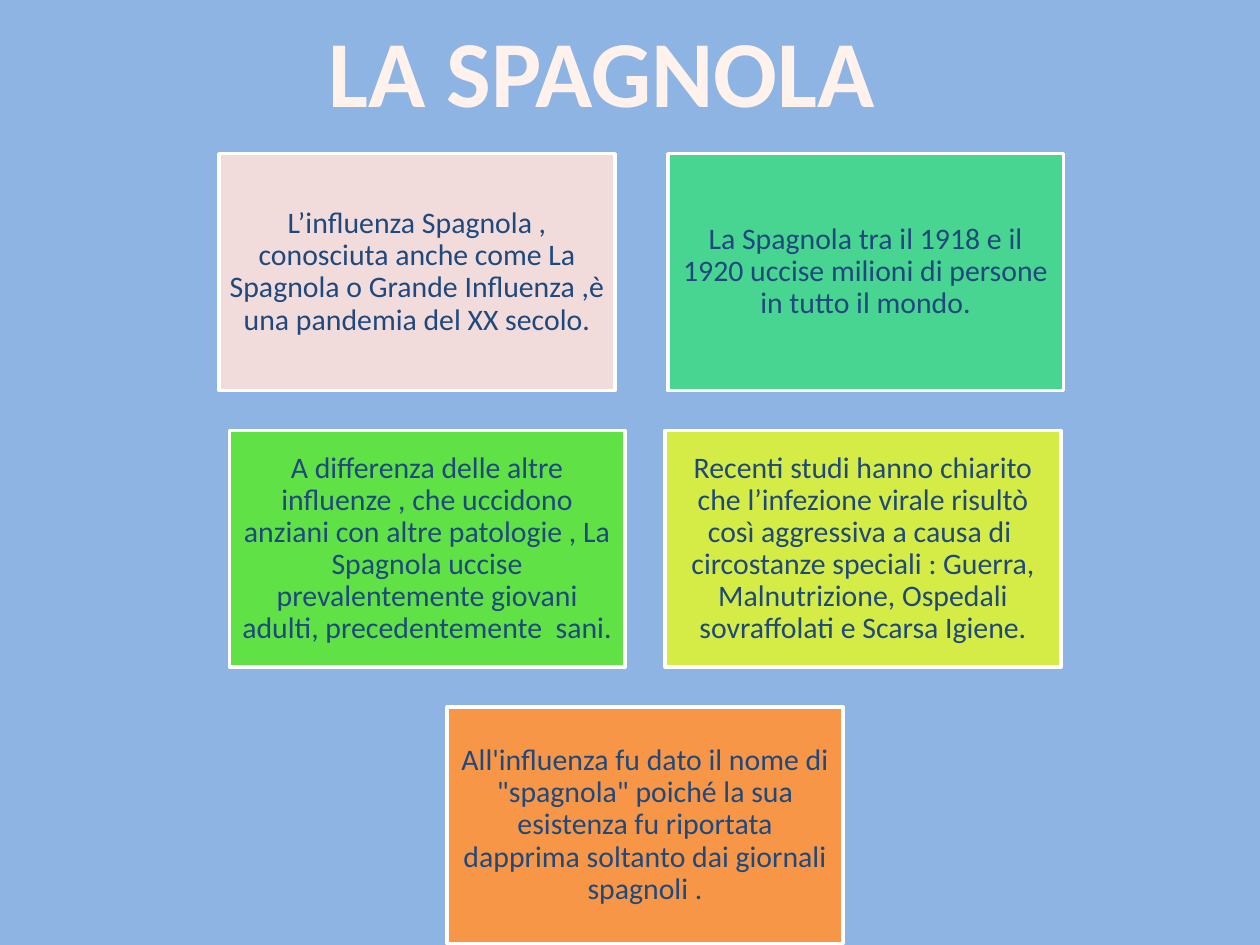
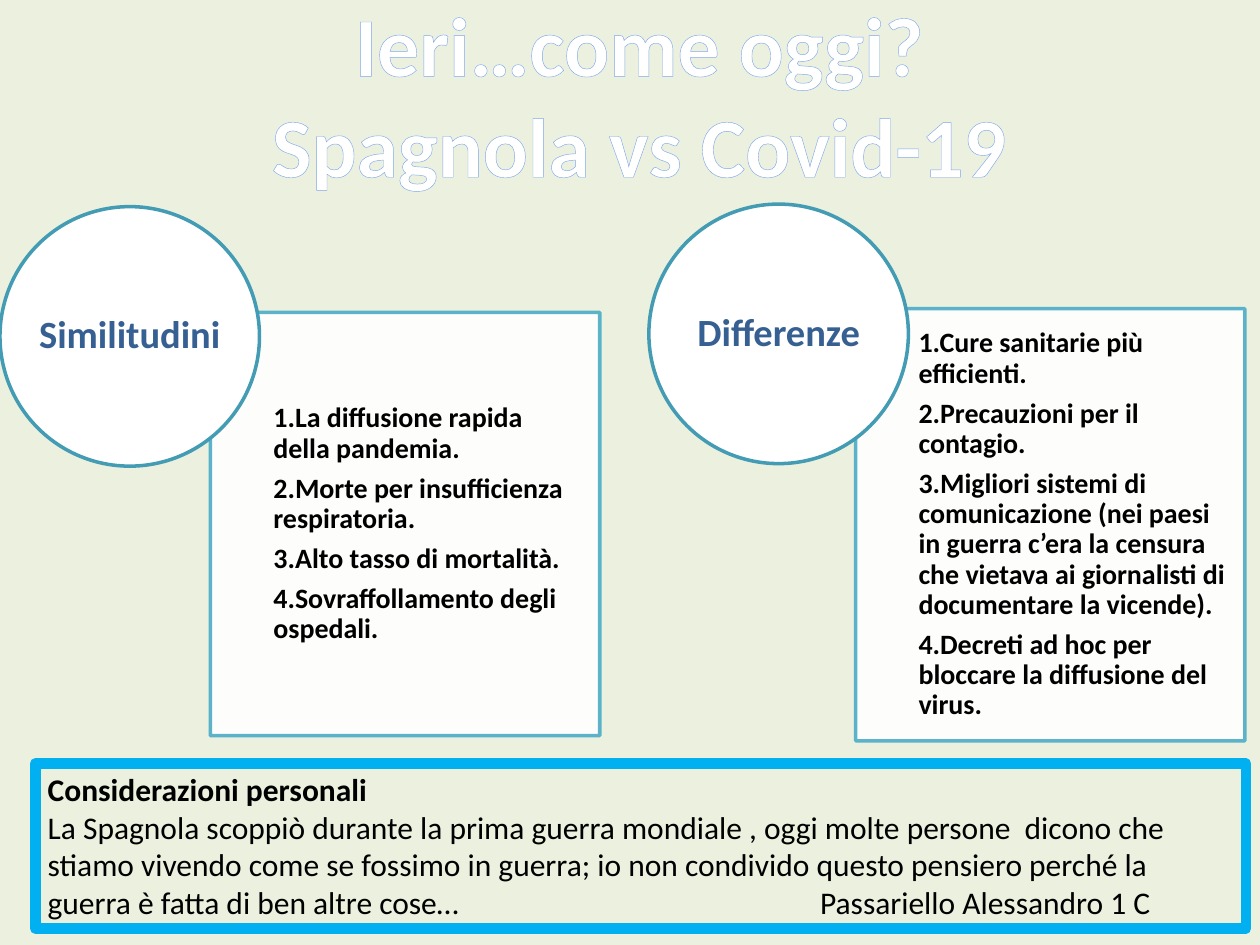
import lxml.etree
import pptx
import pptx.dml.color
import pptx.enum.shapes
import pptx.enum.text
import pptx.oxml.ns
import pptx.util

Inches = pptx.util.Inches
Pt = pptx.util.Pt
MSO_SHAPE = pptx.enum.shapes.MSO_SHAPE
ALIGN = pptx.enum.text.PP_ALIGN
ANCHOR = pptx.enum.text.MSO_ANCHOR
FONT = "Calibri"

SPAGNOLA_TITLE = {
    "lines": ["LA SPAGNOLA"], "place": (2.48, 0.05, 4.59, 1.01),
    "size": 54, "color": "FFF2ED", "outline": "EB6A00", "wrap": False,
}
COMPARISON_TITLE = {
    "lines": ["Ieri…come oggi?", "Spagnola vs Covid-19"], "place": (0.51, -0.11, 9.13, 1.72),
    "size": 48, "color": "FFFFFF", "outline": "7EA6EA", "wrap": True,
}

# Each row of cards: the left edge of every card with its fill and text
CARD_ROWS = [
    [
        (1.74, "F2DCDB", "L’influenza Spagnola , conosciuta anche come La Spagnola o Grande "
                         "Influenza ,è una pandemia del XX secolo."),
        (5.3, "48D491", "La Spagnola tra il 1918 e il 1920 uccise milioni di persone in tutto il mondo."),
    ],
    [
        (1.82, "60E146", "A differenza delle altre influenze , che uccidono anziani con altre "
                         "patologie , La Spagnola uccise prevalentemente giovani adulti, "
                         "precedentemente  sani."),
        (5.28, "D5EC46", "Recenti studi hanno chiarito che l’infezione virale risultò così "
                         "aggressiva a causa di  circostanze speciali : Guerra, Malnutrizione, "
                         "Ospedali sovraffolati e Scarsa Igiene."),
    ],
    [
        (3.55, "F79646", "All'influenza fu dato il nome di \"spagnola\" poiché la sua esistenza fu "
                         "riportata dapprima soltanto dai giornali spagnoli ."),
    ],
]
CARD_WIDTH, CARD_HEIGHT = 3.14, 1.88
FIRST_ROW_TOP, ROW_STEP = 1.22, 2.195

COMPARISONS = [
    {
        "heading": "Similitudini", "circle": (0, 1.64), "panel": (1.67, 2.48, 3.09, 3.36),
        "points": [
            "1.La diffusione rapida della pandemia.",
            "2.Morte per insufficienza respiratoria.",
            "3.Alto tasso di mortalità.",
            "4.Sovraffollamento degli ospedali.",
        ],
    },
    {
        "heading": "Differenze", "circle": (5.15, 1.62), "panel": (6.79, 2.45, 3.09, 3.43),
        "points": [
            "1.Cure sanitarie più efficienti.",
            "2.Precauzioni per il contagio.",
            "3.Migliori sistemi di comunicazione (nei paesi in guerra c’era la censura che "
            "vietava ai giornalisti di documentare la vicende).",
            "4.Decreti ad hoc per bloccare la diffusione del virus.",
        ],
    },
]
CIRCLE_SIZE = 2.06

REFLECTION_HEADING = "Considerazioni personali"
REFLECTION = ("La Spagnola scoppiò durante la prima guerra mondiale , oggi molte persone  dicono che "
              "stiamo vivendo come se fossimo in guerra; io non condivido questo pensiero perché la "
              "guerra è fatta di ben altre cose…")
SIGNATURE = "Passariello Alessandro 1 C"
SIGNATURE_TAB = 6.13


def rgb(value):
    return pptx.dml.color.RGBColor.from_string(value)


def add_xml(parent, tag, index=None, **attributes):
    element = lxml.etree.Element(pptx.oxml.ns.qn(tag), attributes)
    parent.insert(len(parent) if index is None else index, element)
    return element


def write_lines(text_frame, lines, size, color, bold=False, align=ALIGN.LEFT):
    text_frame.text = "\n".join(lines)
    for paragraph in text_frame.paragraphs:
        paragraph.alignment = align
        for run in paragraph.runs:
            run.font.name = FONT
            run.font.size = Pt(size)
            run.font.bold = bold
            run.font.color.rgb = rgb(color)


def set_margins(text_frame, left, others):
    text_frame.margin_left = Inches(left)
    text_frame.margin_top = text_frame.margin_right = text_frame.margin_bottom = Inches(others)


def set_line(shape, color, width):
    shape.line.color.rgb = rgb(color)
    shape.line.width = Pt(width)


def add_filled_shape(slide, kind, place, fill, line, lines, size, color,
                     bold=False, align=ALIGN.CENTER, margins=(0, 0)):
    """Add a shape whose text is middle-anchored with tight line spacing."""
    shape = slide.shapes.add_shape(kind, *map(Inches, place))
    shape.shadow.inherit = False
    shape.fill.solid()
    shape.fill.fore_color.rgb = rgb(fill)
    set_line(shape, line, 2)
    text_frame = shape.text_frame
    text_frame.word_wrap = True
    text_frame.vertical_anchor = ANCHOR.MIDDLE
    set_margins(text_frame, *margins)
    write_lines(text_frame, lines, size, color, bold, align)
    for paragraph in text_frame.paragraphs:
        paragraph.line_spacing = 0.9
    for paragraph in text_frame.paragraphs[:-1]:
        paragraph.space_after = Pt(0.35 * size)
    return shape


def make_translucent(shape, percent):
    for color in shape._element.spPr.iter(pptx.oxml.ns.qn("a:srgbClr")):
        add_xml(color, "a:alpha", val=str(percent * 1000))


def add_titled_slide(presentation, background, title):
    slide = presentation.slides.add_slide(presentation.slide_layouts[5])
    slide.background.fill.solid()
    slide.background.fill.fore_color.rgb = rgb(background)
    shape = slide.shapes.title
    shape.left, shape.top, shape.width, shape.height = map(Inches, title["place"])
    text_frame = shape.text_frame
    write_lines(text_frame, title["lines"], title["size"], title["color"], True, ALIGN.CENTER)
    text_frame.word_wrap = title["wrap"]
    text_frame.vertical_anchor = ANCHOR.TOP
    text_frame.auto_size = pptx.enum.text.MSO_AUTO_SIZE.SHAPE_TO_FIT_TEXT
    for paragraph in text_frame.paragraphs:
        for run in paragraph.runs:
            outline = add_xml(run._r.get_or_add_rPr(), "a:ln", 0, w=str(Pt(2.48)))
            add_xml(add_xml(outline, "a:solidFill"), "a:srgbClr", val=title["outline"])
    return slide


def build_spagnola_slide(presentation):
    slide = add_titled_slide(presentation, "8EB4E3", SPAGNOLA_TITLE)
    for row, cards in enumerate(CARD_ROWS):
        top = FIRST_ROW_TOP + row * ROW_STEP
        for left, fill, text in cards:
            add_filled_shape(slide, MSO_SHAPE.RECTANGLE, (left, top, CARD_WIDTH, CARD_HEIGHT),
                             fill, "FFFFFF", [text], 17, "1F497D", margins=(0.07, 0.07))


def add_reflection(slide):
    box = slide.shapes.add_textbox(Inches(0.28), Inches(6.06), Inches(9.61), Inches(1.31))
    set_line(box, "00B0F0", 6)
    text_frame = box.text_frame
    text_frame.word_wrap = True
    write_lines(text_frame, [REFLECTION_HEADING, f"{REFLECTION}\t{SIGNATURE}"], 18, "000000")
    heading, body = text_frame.paragraphs
    heading.runs[0].font.bold = True
    tabs = add_xml(body._p.get_or_add_pPr(), "a:tabLst")
    add_xml(tabs, "a:tab", pos=str(Inches(SIGNATURE_TAB)), algn="l")


def build_comparison_slide(presentation):
    slide = add_titled_slide(presentation, "EBF1DE", COMPARISON_TITLE)
    for comparison in COMPARISONS:
        panel = add_filled_shape(slide, MSO_SHAPE.RECTANGLE, comparison["panel"], "FFFFFF", "4BACC6",
                                 comparison["points"], 16, "000000", True, ALIGN.LEFT, (0.5, 0.12))
        # Only the panel's own fill and line are translucent, not its text
        make_translucent(panel, 90)
        add_filled_shape(slide, MSO_SHAPE.OVAL, (*comparison["circle"], CIRCLE_SIZE, CIRCLE_SIZE),
                         "FFFFFF", "449CB4", [comparison["heading"]], 22, "376092", True)
    add_reflection(slide)


def main():
    presentation = pptx.Presentation()
    presentation.slide_width = Inches(10)
    presentation.slide_height = Inches(7.5)
    build_spagnola_slide(presentation)
    build_comparison_slide(presentation)
    presentation.save("out.pptx")


if __name__ == "__main__":
    main()
